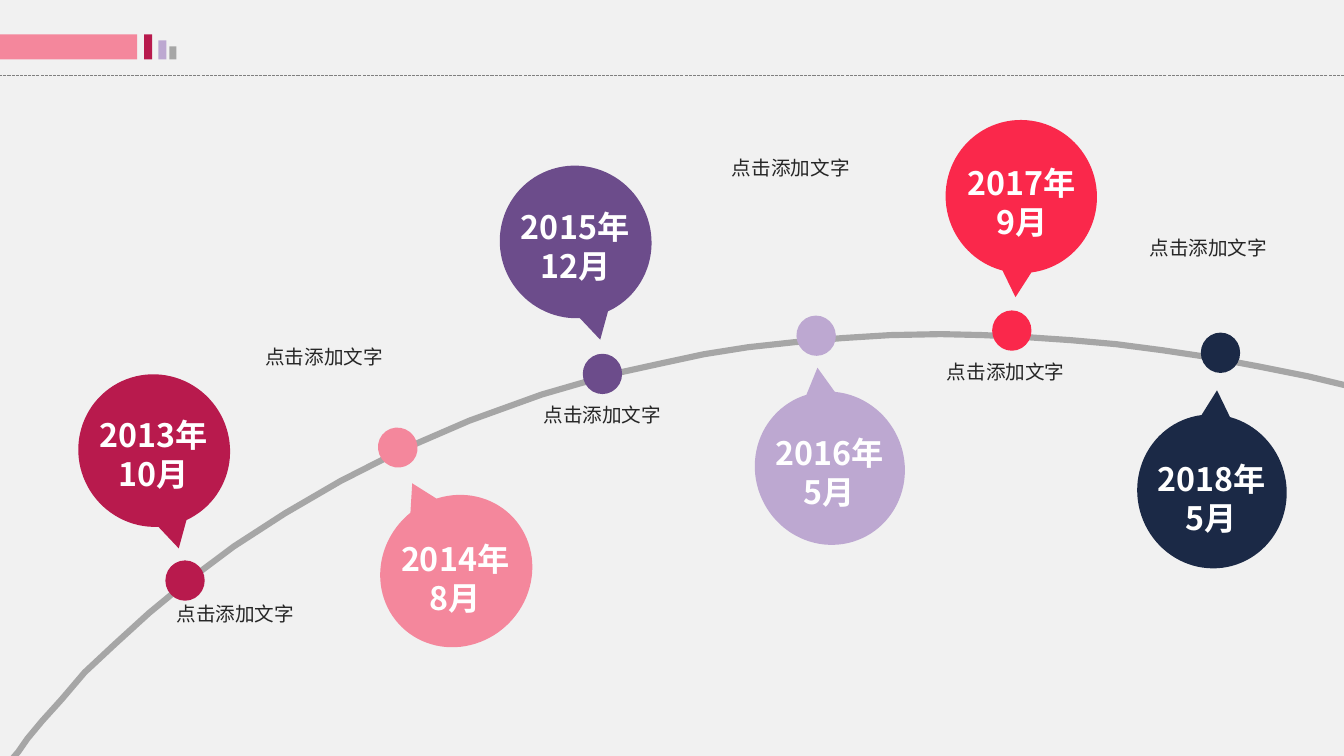
from dataclasses import dataclass
from math import hypot

from lxml.etree import SubElement
from pptx import Presentation
from pptx.dml.color import RGBColor
from pptx.enum.dml import MSO_LINE
from pptx.enum.shapes import MSO_CONNECTOR, MSO_SHAPE
from pptx.enum.text import MSO_AUTO_SIZE, PP_ALIGN
from pptx.oxml.ns import qn
from pptx.util import Inches, Pt

FONT = "Noto Sans CJK SC"
COLORS = {
    "background": "F1F1F1", "rule": "808080", "gray": "A6A6A6", "gold": "D8BC75",
    "text": "262626", "white": "FFFFFF", "crimson": "B81A4D", "pink": "F4879C",
    "purple": "6C4C8B", "lilac": "BDA8D1", "red": "FA284B", "navy": "1B2946",
}
LABEL_TEXT = "点击添加文字"
LABEL_FORMAT = {"size": Pt(14), "name": FONT}
DATE_FORMAT = {"size": Pt(23), "name": FONT, "bold": True}
LABEL_MARGINS = {"margin_left": 0, "margin_top": 0, "margin_right": 0, "margin_bottom": 0}
DATE_MARGINS = {"margin_top": Inches(0.09), "margin_bottom": Inches(0.01)}
DATE_SIZE = (1.37, 0.87)
DOT_SIZE = (0.39, 0.4)
LINE_PITCH = 1.2
BAND_WIDTH = 0.03

Box = tuple[float, float, float, float]
Point = tuple[float, float]


@dataclass
class Milestone:
    year: str
    month: str
    color: str
    callout: Box
    rotation: float
    dot: Point
    dot_rotation: float
    date: Point
    label: Box


@dataclass
class Bar:
    color: str
    box: Box


MILESTONES = [
    Milestone("2013年", "10月", "crimson", (0.78, 3.71, 1.5, 1.52), 327.7,
              (1.64, 5.56), 0, (0.84, 4.03), (1.75, 5.97, 1.31, 0.41)),
    Milestone("2014年", "8月", "pink", (3.75, 4.93, 1.55, 1.47), 134,
              (3.75, 4.24), 144, (3.83, 5.26), (2.63, 3.42, 2.17, 0.49)),
    Milestone("2015年", "12月", "purple", (4.96, 1.64, 1.5, 1.52), 327.7,
              (5.78, 3.51), 0, (5.02, 1.97), (5.39, 4, 1.63, 0.83)),
    Milestone("2016年", "5月", "lilac", (7.49, 3.88, 1.48, 1.53), 155.1,
              (7.9, 3.13), 163.7, (7.54, 4.21), (7.26, 1.55, 1.58, 1.27)),
    Milestone("2017年", "9月", "red", (9.38, 1.19, 1.5, 1.52), 345.1,
              (9.84, 3.08), 0, (9.45, 1.53), (9.39, 3.57, 1.79, 0.84)),
    Milestone("2018年", "5月", "navy", (11.28, 4.11, 1.48, 1.53), 165,
              (11.91, 3.3), 0, (11.33, 4.47), (11.4, 2.34, 1.58, 0.79)),
]
BARS = [
    Bar("crimson", (1.43, 0.34, 0.08, 0.25)),
    Bar("gray", (1.68, 0.46, 0.07, 0.13)),
    Bar("pink", (-0.03, 0.34, 1.39, 0.25)),
    Bar("lilac", (1.57, 0.4, 0.08, 0.19)),
]
ARC = [
    (0.11, 7.52), (0.17, 7.45), (0.26, 7.32), (0.41, 7.14), (0.6, 6.93), (0.83, 6.66),
    (1.13, 6.38), (1.47, 6.07), (1.87, 5.74), (2.31, 5.41), (2.82, 5.08), (3.37, 4.76),
    (3.98, 4.45), (4.65, 4.16), (5.37, 3.9), (5.75, 3.79), (6.15, 3.68), (6.56, 3.59),
    (6.98, 3.5), (7.42, 3.43), (7.88, 3.38), (8.35, 3.34), (8.83, 3.31), (9.33, 3.3),
    (9.75, 3.31), (10.18, 3.33), (10.62, 3.36), (11.07, 3.4), (11.53, 3.46),
    (12, 3.53), (12.48, 3.62), (12.98, 3.72), (13.48, 3.84),
]


def rgb(color: str) -> RGBColor:
    return RGBColor.from_string(COLORS[color])


def add_filled(s, kind, box: Box, color: str, rotation: float = 0) -> None:
    sp = s.shapes.add_shape(kind, *map(Inches, box))
    sp.shadow.inherit = False
    sp.fill.solid()
    sp.fill.fore_color.rgb = rgb(color)
    sp.line.fill.background()
    sp.rotation = rotation


def add_text(s, box: Box, lines: list[str], font: dict, color: str, margins: dict,
             align=PP_ALIGN.LEFT, auto_size=MSO_AUTO_SIZE.NONE) -> None:
    tf = s.shapes.add_textbox(*map(Inches, box)).text_frame
    tf.word_wrap = True
    tf.auto_size = auto_size
    for name, value in margins.items():
        setattr(tf, name, value)
    for i, line in enumerate(lines):
        p = tf.add_paragraph() if i else tf.paragraphs[0]
        p.alignment = align
        p.line_spacing = Pt(font["size"].pt * LINE_PITCH)
        r = p.add_run()
        r.text = line
        for name, value in font.items():
            setattr(r.font, name, value)
        r.font.color.rgb = rgb(color)
        SubElement(r.font._element, qn("a:ea"), typeface=FONT)


def inner_edge(points: list[Point], width: float) -> list[Point]:
    """Shift each point by width, at right angles to the curve and below it."""
    edge = []
    for i, (x, y) in enumerate(points):
        x0, y0 = points[max(i - 1, 0)]
        x1, y1 = points[min(i + 1, len(points) - 1)]
        length = hypot(x1 - x0, y1 - y0)
        edge.append((x - width * (y1 - y0) / length, y + width * (x1 - x0) / length))
    return edge


def add_arc(s) -> None:
    outline = ARC + inner_edge(ARC, BAND_WIDTH)[::-1]
    start, *rest = [(Inches(x), Inches(y)) for x, y in outline]
    builder = s.shapes.build_freeform(*start)
    builder.add_line_segments(rest, close=True)
    sp = builder.convert_to_shape()
    sp.shadow.inherit = False
    sp.fill.solid()
    sp.fill.fore_color.rgb = rgb("gold")
    sp.line.color.rgb = rgb("gray")
    sp.line.width = Pt(2.25)


def add_header(s) -> None:
    rule = s.shapes.add_connector(MSO_CONNECTOR.STRAIGHT, Inches(13.33), Inches(0.75),
                                  0, Inches(0.75))
    rule.line.color.rgb = rgb("rule")
    rule.line.width = Pt(0.75)
    rule.line.dash_style = MSO_LINE.SQUARE_DOT
    SubElement(rule._element.spPr, qn("a:effectLst"))
    for bar in BARS:
        add_filled(s, MSO_SHAPE.RECTANGLE, bar.box, bar.color)


def add_milestone(s, m: Milestone) -> None:
    add_filled(s, MSO_SHAPE.OVAL_CALLOUT, m.callout, m.color, m.rotation)
    add_filled(s, MSO_SHAPE.OVAL, m.dot + DOT_SIZE, m.color, m.dot_rotation)
    add_text(s, m.label, [LABEL_TEXT], LABEL_FORMAT, "text", LABEL_MARGINS)
    add_text(s, m.date + DATE_SIZE, [m.year, m.month], DATE_FORMAT, "white", DATE_MARGINS,
             PP_ALIGN.CENTER, MSO_AUTO_SIZE.SHAPE_TO_FIT_TEXT)


def main() -> None:
    prs = Presentation()
    prs.slide_width, prs.slide_height = Inches(13.33), Inches(7.5)
    s = prs.slides.add_slide(prs.slide_layouts[6])
    s.background.fill.solid()
    s.background.fill.fore_color.rgb = rgb("background")
    add_header(s)
    add_arc(s)
    for milestone in MILESTONES:
        add_milestone(s, milestone)
    prs.save("out.pptx")


if __name__ == "__main__":
    main()
